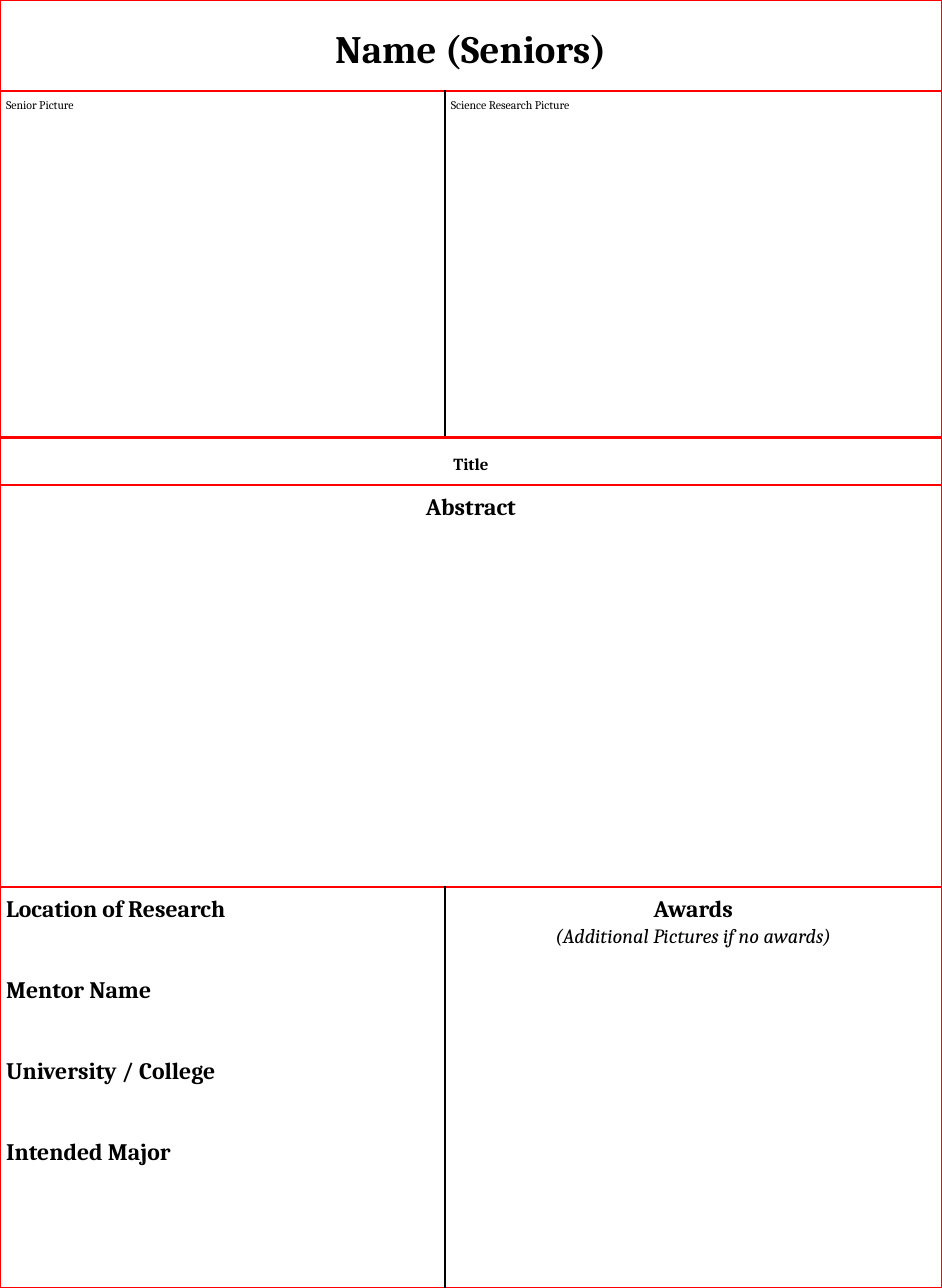
import pptx
import pptx.util
import pptx.dml.color
import pptx.enum.text
from pptx.oxml import parse_xml
from pptx.oxml.ns import nsdecls

Inches = pptx.util.Inches
Pt = pptx.util.Pt
Align = pptx.enum.text.PP_ALIGN
Anchor = pptx.enum.text.MSO_ANCHOR

THEME = {
    "font": "Cambria", "ink": "000000", "frame": "FF0000",
    "frame_width": 1.5, "divider_width": 1, "leading": 1.07,
    "name": {"size": Pt(23), "bold": True},
    "title": {"size": Pt(10), "bold": True},
    "heading": {"size": Pt(14), "bold": True},
    "hint": {"size": Pt(12), "bold": False, "italic": True},
    "caption": {"size": Pt(7), "bold": False},
}
COLUMNS = [3.66, 4.09]
ROWS = [0.75, 2.85, 0.39, 3.31, 3.3]
SPLIT_ROWS = [1, 4]


def border(cell, position, side, colour, width):
    line = parse_xml(
        f'<a:ln{side} {nsdecls("a")} w="{Pt(width)}" cap="flat" cmpd="sng">'
        f'<a:solidFill><a:srgbClr val="{colour}"/></a:solidFill>'
        f'<a:prstDash val="solid"/></a:ln{side}>')
    cell._tc.get_or_add_tcPr().insert(position, line)


def write(cell, lines, align=Align.LEFT, gap=0):
    for index, (text, style) in enumerate(lines):
        frame = cell.text_frame
        para = frame.paragraphs[0] if index == 0 else frame.add_paragraph()
        para.alignment = align
        para.line_spacing = THEME["leading"]
        para.space_before = Pt(gap if index else 0)
        span = para.add_run()
        span.text = text
        span.font.name = THEME["font"]
        span.font.color.rgb = pptx.dml.color.RGBColor.from_string(THEME["ink"])
        for key, value in THEME[style].items():
            setattr(span.font, key, value)


# Page
deck = pptx.Presentation()
deck.slide_width, deck.slide_height = Inches(7.75), Inches(10.6)
page = deck.slides.add_slide(deck.slide_layouts[6])

# Full-page table
table = page.shapes.add_table(
    len(ROWS), len(COLUMNS), 0, 0, deck.slide_width, deck.slide_height).table
table.first_row = table.horz_banding = False
for column, width in zip(table.columns, COLUMNS):
    column.width = Inches(width)
for row, height in zip(table.rows, ROWS):
    row.height = Inches(height)

# Cell margins, fills and borders
cell_format = {"margin_left": Inches(0.05), "margin_top": Inches(0.06),
               "margin_right": Inches(0.05), "margin_bottom": 0}
for r in range(len(ROWS)):
    for c in range(len(COLUMNS)):
        cell = table.cell(r, c)
        for key, value in cell_format.items():
            setattr(cell, key, value)
        cell.fill.background()
        inner_side = "R" if c == 0 else "L"
        for position, side in enumerate("LRTB"):
            if r in SPLIT_ROWS and side == inner_side:
                border(cell, position, side, THEME["ink"], THEME["divider_width"])
            else:
                border(cell, position, side, THEME["frame"], THEME["frame_width"])
    if r not in SPLIT_ROWS:
        table.cell(r, 0).merge(table.cell(r, 1))

# Full-width rows
for r, text, style, anchor in [
        (0, "Name (Seniors)", "name", Anchor.MIDDLE),
        (2, "Title", "title", Anchor.MIDDLE),
        (3, "Abstract", "heading", Anchor.TOP)]:
    cell = table.cell(r, 0)
    cell.vertical_anchor = anchor
    write(cell, [(text, style)], Align.CENTER)

# Picture captions
for c, text in enumerate(["Senior Picture", "Science Research Picture"]):
    write(table.cell(1, c), [(text, "caption")])

# Research details and awards
details = ["Location of Research", "Mentor Name",
           "University / College", "Intended Major"]
write(table.cell(4, 0), [(text, "heading") for text in details], gap=30.8)
write(table.cell(4, 1), [("Awards", "heading"),
                         ("(Additional Pictures if no awards)", "hint")],
      Align.CENTER)

deck.save("out.pptx")
